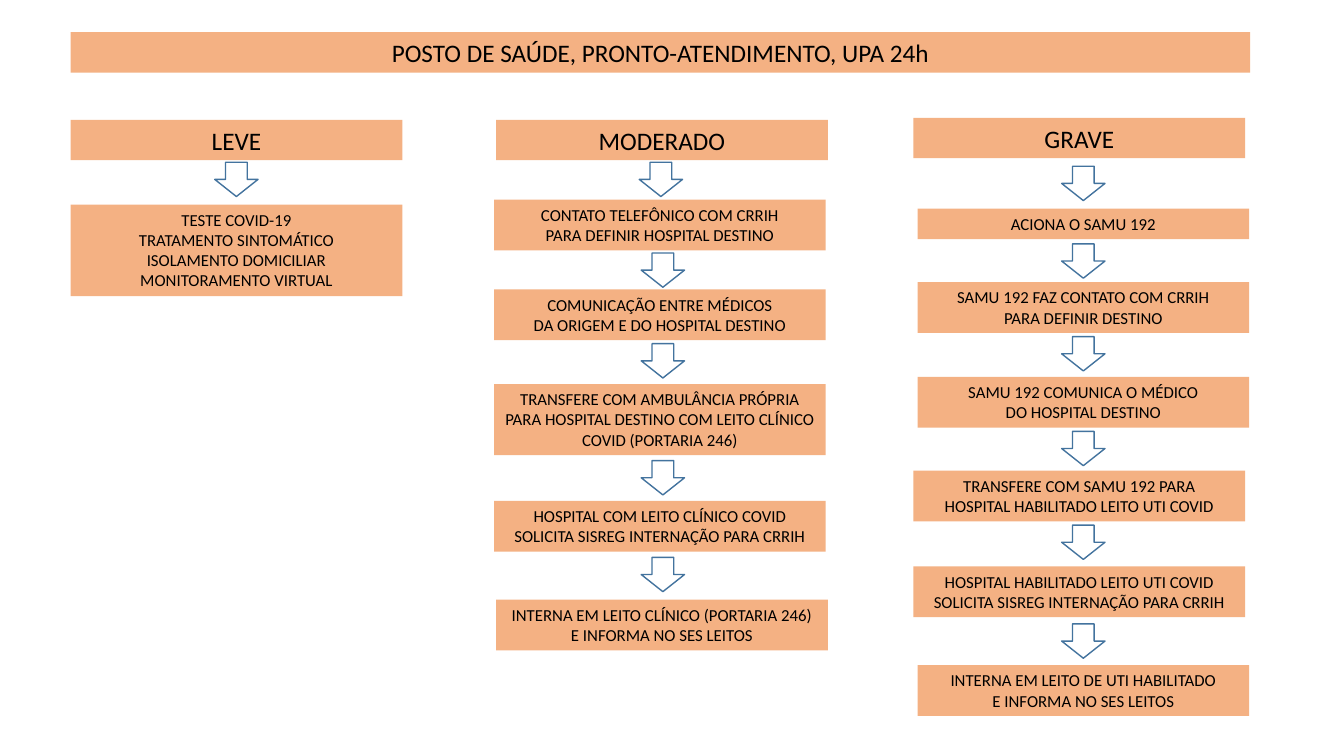
from dataclasses import dataclass

from pptx import Presentation
from pptx.dml.color import RGBColor
from pptx.enum.shapes import MSO_SHAPE
from pptx.enum.text import MSO_AUTO_SIZE, PP_ALIGN
from pptx.slide import Slide
from pptx.util import Inches, Pt


@dataclass(frozen=True)
class Theme:
    font: str = "Calibri"
    text: RGBColor = RGBColor(0x00, 0x00, 0x00)
    box: RGBColor = RGBColor(0xF4, 0xB1, 0x83)
    arrow_line: RGBColor = RGBColor(0x43, 0x73, 0x9E)
    heading_size: int = 18
    step_size: int = 12
    arrow_weight: int = 1


@dataclass(frozen=True)
class Step:
    left: float
    top: float
    arrow_top: float
    lines: int
    paragraphs: tuple[str, ...]
    arrow_shift: float = 0


@dataclass(frozen=True)
class Pathway:
    heading: str
    left: float
    top: float
    arrow_left: float
    steps: tuple[Step, ...]


THEME = Theme()

# Grid: columns and rows of a tenth of an inch
SLIDE_COLUMNS, SLIDE_ROWS = 133.3, 75
TITLE_COLUMNS, BOX_COLUMNS = 117, 32.9
HEADING_ROWS = 4
STEP_PADDING_ROWS, LINE_ROWS = 1, 2.02
ARROW_COLUMNS, ARROW_ROWS = 4.3, 3.4

TITLE = "POSTO DE SAÚDE, PRONTO-ATENDIMENTO, UPA 24h"

PATHWAYS = (
    Pathway("LEVE", 7, 11.9, 21.3, (
        Step(7, 20.3, 16.1, 4, (
            "TESTE COVID-19", "TRATAMENTO SINTOMÁTICO",
            "ISOLAMENTO DOMICILIAR", "MONITORAMENTO VIRTUAL")),
    )),
    Pathway("MODERADO", 49.2, 11.9, 63.6, (
        Step(49, 19.8, 16.1, 2, (
            "CONTATO TELEFÔNICO COM CRRIH", "PARA DEFINIR HOSPITAL DESTINO"),
            arrow_shift=-0.2),
        Step(49, 28.7, 25.1, 2, (
            "COMUNICAÇÃO ENTRE MÉDICOS", "DA ORIGEM E DO HOSPITAL DESTINO")),
        Step(49, 38.1, 34.1, 3, (
            "TRANSFERE COM AMBULÂNCIA PRÓPRIA PARA HOSPITAL DESTINO "
            "COM LEITO CLÍNICO COVID (PORTARIA 246)",)),
        Step(49, 49.7, 45.7, 2, (
            "HOSPITAL COM LEITO CLÍNICO COVID "
            "SOLICITA SISREG INTERNAÇÃO PARA CRRIH",)),
        Step(49.2, 59.5, 55.3, 2, (
            "INTERNA EM LEITO CLÍNICO (PORTARIA 246) "
            "E INFORMA NO SES LEITOS",)),
    )),
    Pathway("GRAVE", 90.6, 11.7, 105.3, (
        Step(91, 20.7, 16.5, 1, ("ACIONA O SAMU 192",)),
        Step(91, 28, 24.2, 2, (
            "SAMU 192 FAZ CONTATO COM CRRIH", "PARA DEFINIR DESTINO")),
        Step(91, 37.4, 33.4, 2, (
            "SAMU 192 COMUNICA O MÉDICO", "DO HOSPITAL DESTINO")),
        Step(90.6, 46.7, 42.8, 2, (
            "TRANSFERE COM SAMU 192 PARA",
            "HOSPITAL HABILITADO LEITO UTI COVID")),
        Step(90.6, 56.2, 52.1, 2, (
            "HOSPITAL HABILITADO LEITO UTI COVID",
            "SOLICITA SISREG INTERNAÇÃO PARA CRRIH")),
        Step(91, 66, 61.9, 2, (
            "INTERNA EM LEITO DE UTI HABILITADO", "E INFORMA NO SES LEITOS")),
    )),
)


def grid(units: float) -> int:
    return Inches(units / 10)


def add_box(slide: Slide, left: float, top: float, columns: float, rows: float,
            paragraphs: tuple[str, ...], size: int) -> None:
    box = slide.shapes.add_textbox(*map(grid, (left, top, columns, rows)))
    box.fill.solid()
    box.fill.fore_color.rgb = THEME.box
    frame = box.text_frame
    frame.word_wrap = True
    frame.auto_size = MSO_AUTO_SIZE.SHAPE_TO_FIT_TEXT
    frame.text = "\n".join(paragraphs)
    font_format = {"name": THEME.font, "size": Pt(size)}
    for paragraph in frame.paragraphs:
        paragraph.alignment = PP_ALIGN.CENTER
        for run in paragraph.runs:
            run.font.color.rgb = THEME.text
            for attribute, value in font_format.items():
                setattr(run.font, attribute, value)


def add_arrow(slide: Slide, left: float, top: float) -> None:
    arrow = slide.shapes.add_shape(
        MSO_SHAPE.DOWN_ARROW, *map(grid, (left, top, ARROW_COLUMNS, ARROW_ROWS)))
    arrow.shadow.inherit = False
    arrow.fill.background()
    arrow.line.color.rgb = THEME.arrow_line
    arrow.line.width = Pt(THEME.arrow_weight)


def add_pathway(slide: Slide, pathway: Pathway) -> None:
    add_box(slide, pathway.left, pathway.top, BOX_COLUMNS, HEADING_ROWS,
            (pathway.heading,), THEME.heading_size)
    for step in pathway.steps:
        add_arrow(slide, pathway.arrow_left + step.arrow_shift, step.arrow_top)
        add_box(slide, step.left, step.top, BOX_COLUMNS,
                STEP_PADDING_ROWS + LINE_ROWS * step.lines,
                step.paragraphs, THEME.step_size)


def main() -> None:
    presentation = Presentation()
    presentation.slide_width = grid(SLIDE_COLUMNS)
    presentation.slide_height = grid(SLIDE_ROWS)
    slide = presentation.slides.add_slide(presentation.slide_layouts[6])

    # Title bar, then one column for each degree of severity
    add_box(slide, 7, 3.2, TITLE_COLUMNS, HEADING_ROWS, (TITLE,), THEME.heading_size)
    for pathway in PATHWAYS:
        add_pathway(slide, pathway)

    presentation.save("out.pptx")


if __name__ == "__main__":
    main()
